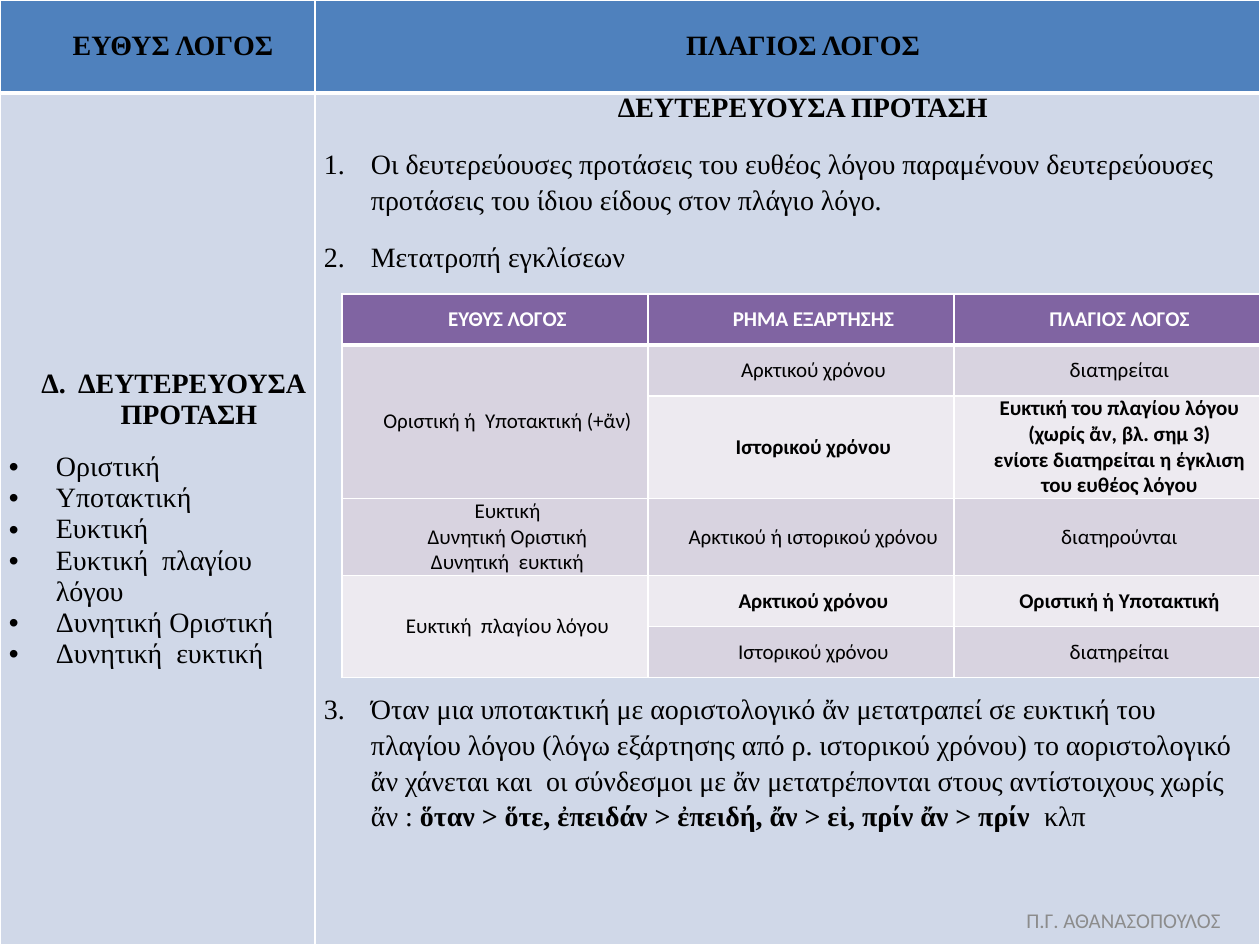
"""Build a slide on Greek indirect speech with two nested grammar tables."""
from dataclasses import dataclass

from lxml import etree
from pptx import Presentation
from pptx import util as u
from pptx.dml.color import RGBColor
from pptx.enum import text
from pptx.oxml.ns import qn

COLORS = {
    "white": "FFFFFF", "black": "000000", "blue": "4F81BD", "pale_blue": "D0D8E8",
    "purple": "8064A2", "lilac": "D8D3E0", "pale_lilac": "EDEAF0", "grey": "8C8C8C",
}


@dataclass(frozen=True)
class Style:
    font: str
    size: int
    color: str = "black"
    bold: bool = False
    centred: bool = True
    indent: int = 0
    hanging: int = 0
    before: int = 0
    spacing: float = 1.0
    bullet: str = ""


@dataclass(frozen=True)
class Para:
    runs: tuple[tuple[str, bool], ...]
    style: Style


@dataclass(frozen=True)
class Cell:
    row: int
    column: int
    fill: str
    paras: tuple[Para, ...]
    rows: int = 1
    top: bool = False


@dataclass(frozen=True)
class Grid:
    left: int
    top: int
    columns: tuple[int, ...]
    rows: tuple[int, ...]
    margin: int
    cells: tuple[Cell, ...]


SERIF, SANS = "Times New Roman", "Calibri"
HEADING = Style(SERIF, 16, bold=True, indent=63, hanging=32, before=12)
MOOD = Style(SERIF, 16, centred=False, indent=47, hanging=47, bullet="•")
FIRST_MOOD = Style(SERIF, 16, centred=False, indent=47, hanging=47, before=12, bullet="•")
RULE = Style(SERIF, 16, centred=False, indent=47, hanging=47, before=12, spacing=1.15, bullet="1.")
LAST_RULE = Style(SERIF, 16, centred=False, indent=47, hanging=47, before=238, spacing=1.15, bullet="1.")
LABEL = Style(SANS, 12, "white", True, indent=25)
PLAIN = Style(SANS, 12, indent=25)
STRONG = Style(SANS, 12, bold=True, indent=25)
FOOTER = Style(SANS, 12, "grey")


def lines(style: Style, *words: str) -> tuple[Para, ...]:
    """Make one paragraph per string, all in one style."""
    return tuple(Para(((word, style.bold),), style) for word in words)


MOODS = ("Υποτακτική", "Ευκτική", "Ευκτική  πλαγίου λόγου", "Δυνητική Οριστική", "Δυνητική  ευκτική")
RULES = (
    "Οι δευτερεύουσες προτάσεις του ευθέος λόγου παραμένουν δευτερεύουσες "
    "προτάσεις του ίδιου είδους στον πλάγιο λόγο.",
    "Μετατροπή εγκλίσεων",
)
PARTICLE_RULE = Para((
    ("Όταν μια υποτακτική με αοριστολογικό ἄν μετατραπεί σε ευκτική του πλαγίου λόγου "
     "(λόγω εξάρτησης από ρ. ιστορικού χρόνου) το αοριστολογικό ἄν χάνεται και  οι σύνδεσμοι "
     "με ἄν μετατρέπονται στους αντίστοιχους χωρίς ἄν : ", False),
    ("ὅταν > ὅτε, ἐπειδάν > ἐπειδή, ἄν > εἰ, πρίν ἄν > πρίν  ", True),
    ("κλπ", False),
), LAST_RULE)

SPEECH = Grid(0, 0, (315, 945), (93, 852), 9, (
    Cell(0, 0, "blue", lines(HEADING, "ΕΥΘΥΣ ΛΟΓΟΣ")),
    Cell(0, 1, "blue", lines(HEADING, "ΠΛΑΓΙΟΣ ΛΟΓΟΣ")),
    Cell(1, 0, "pale_blue", lines(HEADING, "Δ.  ΔΕΥΤΕΡΕΥΟΥΣΑ ΠΡΟΤΑΣΗ")
         + lines(FIRST_MOOD, "Οριστική") + lines(MOOD, *MOODS)),
    Cell(1, 1, "pale_blue", lines(HEADING, "ΔΕΥΤΕΡΕΥΟΥΣΑ ΠΡΟΤΑΣΗ")
         + lines(RULE, *RULES) + (PARTICLE_RULE,), top=True),
))
CHANGES = Grid(342, 294, (306,) * 3, (51, 51, 102, 77, 51, 51), 5, (
    Cell(0, 0, "purple", lines(LABEL, "ΕΥΘΥΣ ΛΟΓΟΣ")),
    Cell(0, 1, "purple", lines(LABEL, "ΡΗΜΑ ΕΞΑΡΤΗΣΗΣ")),
    Cell(0, 2, "purple", lines(LABEL, "ΠΛΑΓΙΟΣ ΛΟΓΟΣ")),
    Cell(1, 0, "lilac", lines(PLAIN, "Οριστική ή  Υποτακτική (+ἄν)"), rows=2),
    Cell(1, 1, "lilac", lines(PLAIN, "Αρκτικού χρόνου")),
    Cell(1, 2, "lilac", lines(PLAIN, "διατηρείται")),
    Cell(2, 1, "pale_lilac", lines(STRONG, "Ιστορικού χρόνου")),
    Cell(2, 2, "pale_lilac", lines(STRONG, "Ευκτική του πλαγίου λόγου", "(χωρίς ἄν, βλ. σημ 3)",
                                   "ενίοτε διατηρείται η έγκλιση του ευθέος λόγου")),
    Cell(3, 0, "lilac", lines(PLAIN, "Ευκτική", "Δυνητική Οριστική", "Δυνητική  ευκτική")),
    Cell(3, 1, "lilac", lines(PLAIN, "Αρκτικού ή ιστορικού χρόνου")),
    Cell(3, 2, "lilac", lines(PLAIN, "διατηρούνται")),
    Cell(4, 0, "pale_lilac", lines(PLAIN, "Ευκτική  πλαγίου λόγου"), rows=2),
    Cell(4, 1, "pale_lilac", lines(STRONG, "Αρκτικού χρόνου")),
    Cell(4, 2, "pale_lilac", lines(STRONG, "Οριστική ή Υποτακτική")),
    Cell(5, 1, "lilac", lines(PLAIN, "Ιστορικού χρόνου")),
    Cell(5, 2, "lilac", lines(PLAIN, "διατηρείται")),
))


def px(length: int) -> u.Emu:
    """Turn px into EMU."""
    return u.Emu(round(length * 914400 / 126))


def rgb(name: str) -> RGBColor:
    """Look up a named colour."""
    return RGBColor.from_string(COLORS[name])


def write(frame, paras: tuple[Para, ...]) -> None:
    """Fill a text frame with styled paragraphs."""
    for index, para in enumerate(paras):
        style = para.style
        paragraph = frame.paragraphs[0] if index == 0 else frame.add_paragraph()
        props = paragraph._p.get_or_add_pPr()
        props.set("marL", str(px(style.indent)))
        props.set("indent", str(-px(style.hanging)))
        if style.bullet == "1.":
            etree.SubElement(props, qn("a:buFont"), typeface="+mj-lt")
            etree.SubElement(props, qn("a:buAutoNum"), type="arabicPeriod")
        elif style.bullet:
            etree.SubElement(props, qn("a:buFont"), typeface="Arial")
            etree.SubElement(props, qn("a:buChar"), char=style.bullet)
        paragraph.alignment = text.PP_ALIGN.CENTER if style.centred else text.PP_ALIGN.LEFT
        paragraph.line_spacing = style.spacing
        paragraph.space_before = u.Pt(style.before if index else 0)
        font = paragraph.font
        font.name, font.size, font.bold = style.font, u.Pt(style.size), style.bold
        font.color.rgb = rgb(style.color)
        for words, bold in para.runs:
            span = paragraph.add_run()
            span.text = words
            if bold != style.bold:
                span.font.bold = bold


def add_borders(cell, row: int) -> None:
    """Draw white cell borders, with a thick rule under the header row."""
    props = cell._tc.get_or_add_tcPr()
    widths = {"L": 1, "R": 1, "T": 3 if row == 1 else 1, "B": 3 if row == 0 else 1}
    for side, width in widths.items():
        line = etree.SubElement(props, qn(f"a:ln{side}"), w=str(u.Pt(width)))
        fill = etree.SubElement(line, qn("a:solidFill"))
        etree.SubElement(fill, qn("a:srgbClr"), val=COLORS["white"])


def draw_grid(page, grid: Grid) -> None:
    """Add a table and fill its cells."""
    table = page.shapes.add_table(
        len(grid.rows), len(grid.columns), px(grid.left), px(grid.top),
        px(sum(grid.columns)), px(sum(grid.rows))).table
    table.horz_banding = False
    for column, width in zip(table.columns, grid.columns):
        column.width = px(width)
    for row, height in zip(table.rows, grid.rows):
        row.height = px(height)
    for item in grid.cells:
        for row in range(item.row, item.row + item.rows):
            cell = table.cell(row, item.column)
            add_borders(cell, row)
            cell.fill.solid()
            cell.fill.fore_color.rgb = rgb(item.fill)
            cell.margin_left = cell.margin_right = px(grid.margin)
            cell.margin_top = cell.margin_bottom = 0
        cell = table.cell(item.row, item.column)
        if item.rows > 1:
            cell.merge(table.cell(item.row + item.rows - 1, item.column))
        cell.vertical_anchor = text.MSO_ANCHOR.TOP if item.top else text.MSO_ANCHOR.MIDDLE
        write(cell.text_frame, item.paras)


def main() -> None:
    """Build and save the deck."""
    deck = Presentation()
    deck.slide_width, deck.slide_height = px(1260), px(945)
    page = deck.slides.add_slide(deck.slide_layouts[6])
    for grid in (SPEECH, CHANGES):
        draw_grid(page, grid)
    box = page.shapes.add_textbox(px(987), px(895), px(273), px(50))
    box.text_frame.word_wrap = True
    box.text_frame.vertical_anchor = text.MSO_ANCHOR.MIDDLE
    write(box.text_frame, lines(FOOTER, "Π.Γ. ΑΘΑΝΑΣΟΠΟΥΛΟΣ"))
    deck.save("out.pptx")


if __name__ == "__main__":
    main()
